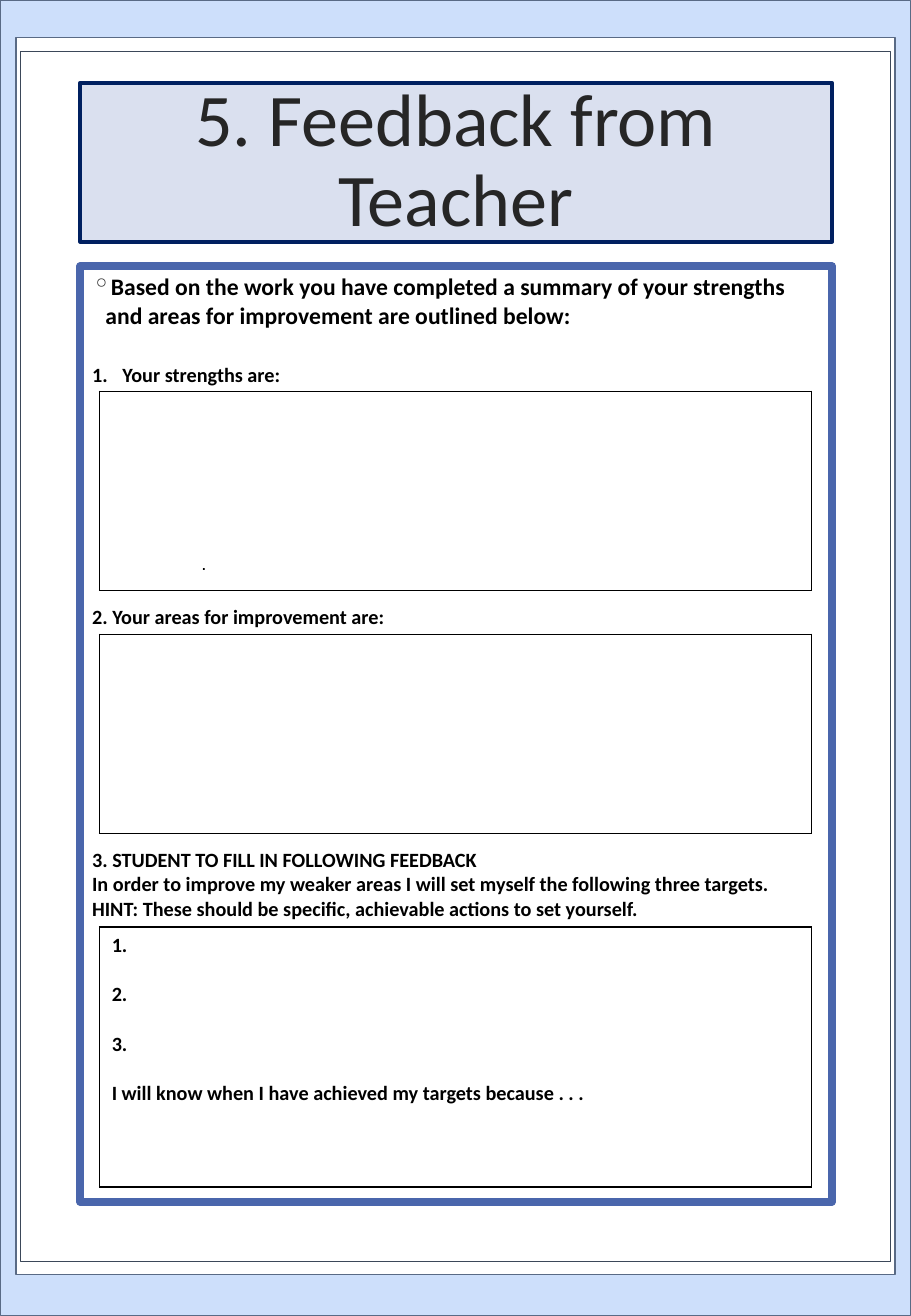
import pptx
import pptx.util
import pptx.dml.color
import pptx.enum.shapes
import pptx.enum.text
import pptx.oxml
import pptx.oxml.ns

Inches = pptx.util.Inches
Pt = pptx.util.Pt
Align = pptx.enum.text.PP_ALIGN
Anchor = pptx.enum.text.MSO_ANCHOR

HUES = {
    "sky": "ACCBF9", "white": "FFFFFF", "slate": "596A85", "steel": "3B4759",
    "pale": "DAE0EF", "navy": "002060", "blue": "4A66AC",
    "ink": "262626", "black": "000000",
}
TITLE = {"size": Pt(44), "name": "Calibri", "bold": False}
LEAD = {"size": Pt(14), "name": "Calibri", "bold": True}
BODY = {"size": Pt(12), "name": "Calibri", "bold": True}
DOT = {"size": Pt(11), "name": "Arial", "bold": False}

LINE = 14.65    # height of one body line in points
GAP = 129.3     # room left for an answer box in points


def node(xml):
    """Build an element from a fragment that uses the a: prefix."""
    head, tail = xml.split(" ", 1)
    return pptx.oxml.parse_xml(f"{head} {pptx.oxml.ns.nsdecls('a')} {tail}")


class Sheet:
    """Holds the colours and the current slide."""

    def __init__(self, slide, hues):
        self.slide = slide
        self.hues = hues

    def color(self, name):
        return pptx.dml.color.RGBColor.from_string(self.hues[name])

    def rect(self, box, line, width, fill=None, alpha=None):
        shape = self.slide.shapes.add_shape(
            pptx.enum.shapes.MSO_SHAPE.RECTANGLE, *map(Inches, box))
        shape.shadow.inherit = False
        shape.line.color.rgb = self.color(line)
        shape.line.width = Pt(width)
        if fill:
            shape.fill.solid()
            shape.fill.fore_color.rgb = self.color(fill)
        else:
            shape.fill.background()
        if alpha:
            tint = shape._element.spPr.find(
                pptx.oxml.ns.qn("a:solidFill"))[0]
            tint.append(node(f'<a:alpha val="{alpha * 1000}"/>'))
        return shape

    def label(self, box, words, style):
        shape = self.slide.shapes.add_textbox(*map(Inches, box))
        frame = shape.text_frame
        frame.word_wrap = False
        frame.vertical_anchor = Anchor.MIDDLE
        self.text(frame, [(words, style, {})])

    def text(self, frame, items, hue="black"):
        """Fill a frame from (words, font values, paragraph values)."""
        for spot, (words, style, form) in enumerate(items):
            para = frame.add_paragraph() if spot else frame.paragraphs[0]
            run = para.add_run()
            run.text = words
            for key, value in style.items():
                setattr(run.font, key, value)
            run.font.color.rgb = self.color(hue)
            for key, value in {"alignment": Align.LEFT, **form}.items():
                setattr(para, key, value)

    def mark(self, para, indent, bullet, hue):
        props = para._p.get_or_add_pPr()
        props.set("marL", str(Inches(indent)))
        props.set("indent", str(-Inches(indent)))
        props.append(node(
            f'<a:buClr ><a:srgbClr val="{self.hues[hue]}"/></a:buClr>'))
        props.append(node(bullet))

    def panel(self, top, height, items=()):
        """Draw a one-cell table with a thin black border."""
        box = (0.82, top, 5.86, height)
        table = self.slide.shapes.add_table(1, 1, *map(Inches, box)).table
        table.first_row = table.horz_banding = False
        cell = table.cell(0, 0)
        props = cell._tc.get_or_add_tcPr()
        for side in "LRTB":
            props.append(node(
                f'<a:ln{side} w="{Pt(1)}"><a:solidFill><a:srgbClr '
                f'val="{self.hues["black"]}"/></a:solidFill></a:ln{side}>'))
        cell.fill.background()
        self.text(cell.text_frame, items)


def main():
    deck = pptx.Presentation()
    deck.slide_width, deck.slide_height = Inches(7.5), Inches(10.83)
    sheet = Sheet(deck.slides.add_slide(deck.slide_layouts[6]), HUES)

    sheet.rect((0, 0, 7.5, 10.83), "slate", 0.5, "sky", 60)
    sheet.rect((0.13, 0.31, 7.24, 10.18), "slate", 1, "white")
    sheet.rect((0.17, 0.42, 7.16, 9.96), "steel", 0.5)

    title = sheet.rect((0.66, 0.68, 6.19, 1.31), "navy", 2.25, "pale")
    title.text_frame.word_wrap = True
    sheet.text(title.text_frame, [
        ("5. Feedback from Teacher", TITLE,
         {"alignment": Align.CENTER, "line_spacing": 0.9}),
    ], "ink")

    frame = sheet.rect((0.66, 2.19, 6.19, 7.7), "blue", 4.5).text_frame
    frame.word_wrap = True
    frame.vertical_anchor = Anchor.TOP
    sheet.text(frame, [
        ("Based on the work you have completed a summary of your strengths "
         "and areas for improvement are outlined below:", LEAD, {}),
        ("Your strengths are:", BODY, {"space_before": Pt(LINE + 5.1)}),
        ("2. Your areas for improvement are:", BODY,
         {"space_before": Pt(GAP)}),
        ("3. STUDENT TO FILL IN FOLLOWING FEEDBACK", BODY,
         {"space_before": Pt(GAP)}),
        ("In order to improve my weaker areas I will set myself the "
         "following three targets. HINT: These should be specific, "
         "achievable actions to set yourself.", BODY, {}),
    ])
    lead, first = frame.paragraphs[:2]
    sheet.mark(lead, 0.11, '<a:buChar char="◦"/>', "ink")
    sheet.mark(first, 0.25, '<a:buAutoNum type="arabicPeriod"/>', "black")

    sheet.label((1.56, 4.49, 0.24, 0.29), ".", DOT)
    for top in (3.22, 5.22):
        sheet.panel(top, 1.64)
    goals = ["1.", "2.", "3.",
             "I will know when I have achieved my targets because . . ."]
    sheet.panel(7.63, 2.14, [
        (goal, BODY, {"space_before": Pt(LINE if spot else 0)})
        for spot, goal in enumerate(goals)])

    deck.save("out.pptx")


if __name__ == "__main__":
    main()
